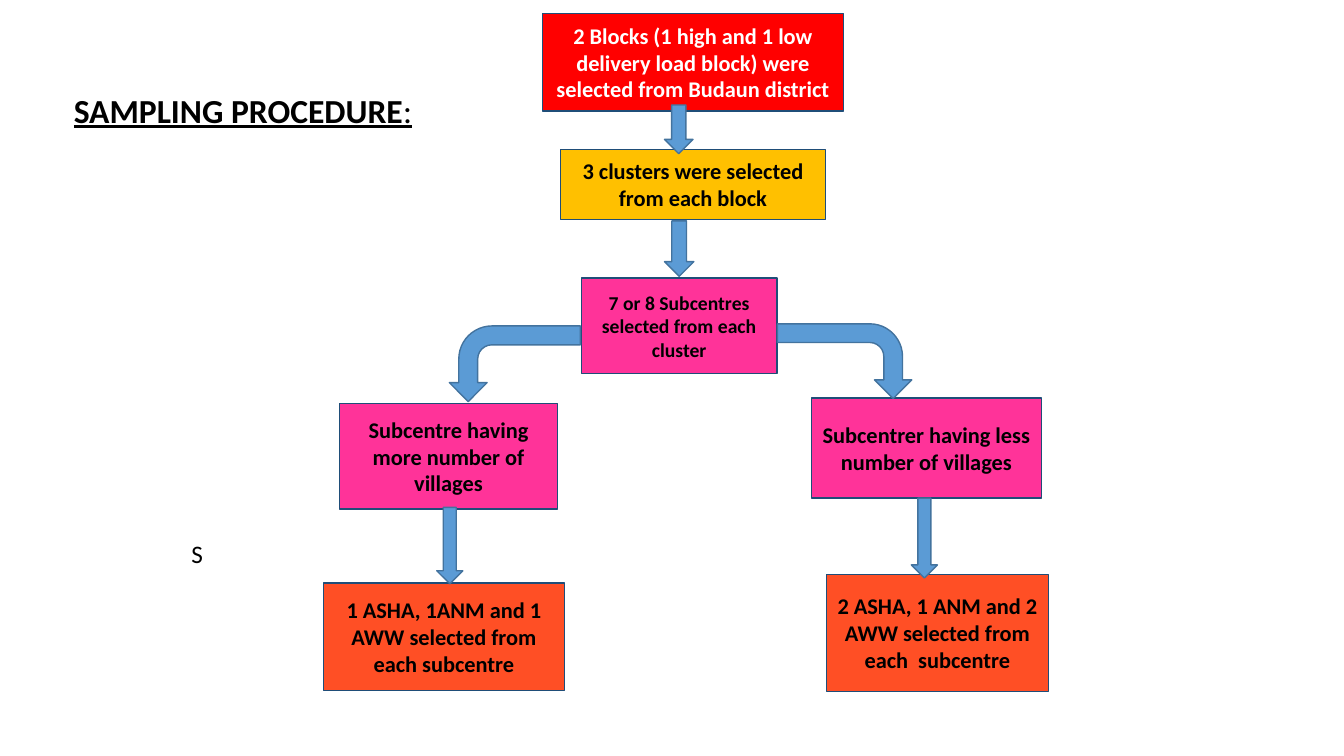
from pptx import Presentation
from pptx.dml.color import RGBColor
from pptx.enum.shapes import MSO_SHAPE
from pptx.enum.text import MSO_ANCHOR, PP_ALIGN
from pptx.util import Inches, Pt

COLORS = {
    "red": "FF0000", "gold": "FFC000", "pink": "FF3399", "orange": "FF4F25",
    "blue": "5B9BD5", "box line": "1F4D78", "arrow line": "43739E",
    "white": "FFFFFF", "black": "000000",
}

deck = Presentation()
deck.slide_width, deck.slide_height = Inches(13.33), Inches(7.5)
page = deck.slides.add_slide(deck.slide_layouts[6])
column, row = deck.slide_width / 160, deck.slide_height / 90


def add_block(kind, cells, fill, line):
    """Add a filled, outlined shape; cells is left, top, width, height on the 160 x 90 grid."""
    left, top, width, height = cells
    block = page.shapes.add_shape(kind, int(left * column), int(top * row),
                                  int(width * column), int(height * row))
    block.shadow.inherit = False
    block.fill.solid()
    block.fill.fore_color.rgb = RGBColor.from_string(COLORS[fill])
    block.line.color.rgb = RGBColor.from_string(COLORS[line])
    block.line.width = Pt(1)
    return block


def add_span(paragraph, words, color="black", **font_format):
    span = paragraph.add_run()
    span.text = words
    span.font.name = "Calibri"
    span.font.color.rgb = RGBColor.from_string(COLORS[color])
    for name, value in font_format.items():
        setattr(span.font, name, value)


labels = [
    ((7.6, 10.1, 45.7, 16.9), [
        ("SAMPLING PROCEDURE", {"size": Pt(24), "bold": True, "underline": True}),
        (":", {"size": Pt(24), "underline": True}),
    ]),
    ((21.6, 63.5, 17.8, 4.8), [("S", {"size": Pt(18)})]),
]
for (left, top, width, height), spans in labels:
    label = page.shapes.add_textbox(int(left * column), int(top * row),
                                    int(width * column), int(height * row))
    label.text_frame.word_wrap = True
    for words, font_format in spans:
        add_span(label.text_frame.paragraphs[0], words, **font_format)

steps = [
    ((64.6, 1.6, 35.8, 11.6), "red", "white", 16,
     "2 Blocks (1 high and 1 low delivery load block) were selected from Budaun district"),
    ((66.7, 17.8, 31.6, 8.3), "gold", "black", 16, "3 clusters were selected from each block"),
    ((69.2, 33.1, 23.3, 11.4), "pink", "black", 14,
     "7 or 8 Subcentres selected from each cluster"),
    ((40.4, 48, 26, 12.6), "pink", "black", 16, "Subcentre having more number of villages"),
    ((38.5, 69.4, 28.7, 12.8), "orange", "black", 16,
     "1 ASHA, 1ANM and 1 AWW selected from each subcentre"),
    ((98.4, 68.4, 26.4, 13.9), "orange", "black", 16,
     "2 ASHA, 1 ANM and 2 AWW selected from each  subcentre"),
    ((96.6, 47.4, 27.4, 11.9), "pink", "black", 16, "Subcentrer having less number of villages"),
]
for cells, fill, color, size, words in steps:
    frame = add_block(MSO_SHAPE.RECTANGLE, cells, fill, "box line").text_frame
    frame.word_wrap = True
    frame.vertical_anchor = MSO_ANCHOR.MIDDLE
    frame.paragraphs[0].alignment = PP_ALIGN.CENTER
    add_span(frame.paragraphs[0], words, color, size=Pt(size), bold=True)

down_arrows = [
    (79.1, 26.3, 3.5, 6.6),
    (108.5, 59.3, 3.1, 9.5),
    (52, 60.4, 3.1, 9.1),
    (79.1, 12.5, 3.4, 5.8),
]
for cells in down_arrows:
    add_block(MSO_SHAPE.DOWN_ARROW, cells, "blue", "arrow line")

branches = [((96.1, 35, 8.9, 16), False), ((56.8, 35.5, 9, 15.6), True)]
for cells, flipped in branches:
    branch = add_block(MSO_SHAPE.BENT_ARROW, cells, "blue", "arrow line")
    branch.rotation = 90
    if flipped:
        branch.element.spPr.get_or_add_xfrm().set("flipV", "1")

deck.save("out.pptx")
